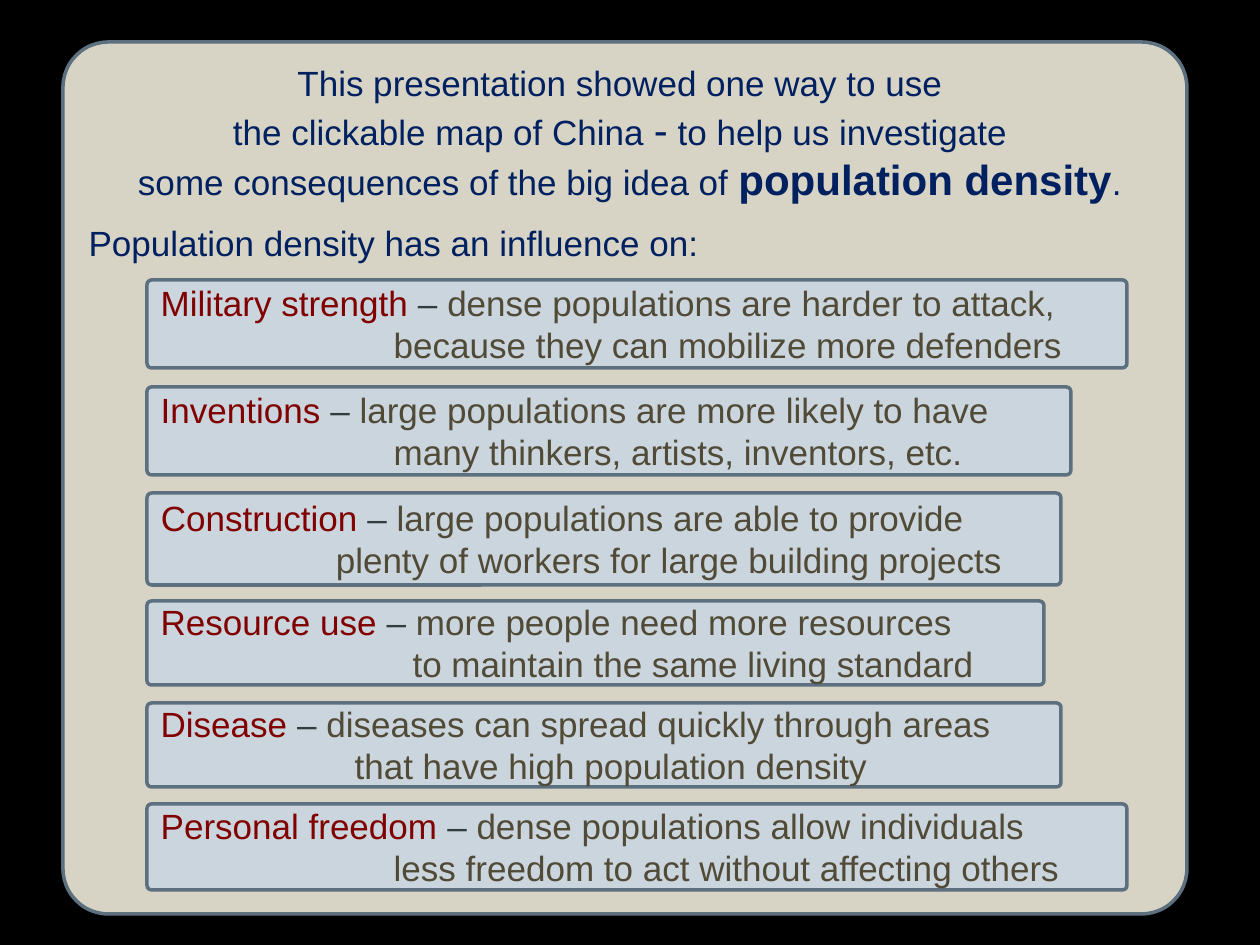
from pptx import Presentation
from pptx.dml.color import RGBColor
from pptx.enum.shapes import MSO_SHAPE
from pptx.enum.text import MSO_ANCHOR, PP_ALIGN
from pptx.util import Pt

PX = 914400 // 126  # EMU in one px
ROUNDED = MSO_SHAPE.ROUNDED_RECTANGLE
TOP, MIDDLE = MSO_ANCHOR.TOP, MSO_ANCHOR.MIDDLE
LEFT, CENTER = PP_ALIGN.LEFT, PP_ALIGN.CENTER

BLACK, SAND, PALE_BLUE, SLATE = "000000", "D8D4C5", "CBD5DE", "5D7080"
NAVY, MAROON, CHARCOAL, OLIVE = "002060", "800000", "343C3D", "504A36"

# alignment, space before in points, runs as (text, size, bold)
INTRO = [
    (CENTER, 0, [("This presentation showed one way to use ", 20, False)]),
    (CENTER, 0, [("the clickable map of China ", 20, False), ("-", 24, False),
                 (" to help us investigate ", 20, False)]),
    (CENTER, 0, [(" some consequences of the big idea of ", 20, False),
                 ("population density", 24, True), (".", 20, False)]),
    (LEFT, 10, [("Population density has an influence on:", 20, False)]),
]

# top, width, height, second-line indent, topic, first line, second line
INFLUENCES = [
    (280, 980, 88, 233, "Military strength", "dense populations are harder to attack,",
     "because they can mobilize more defenders"),
    (387, 924, 88, 233, "Inventions", "large populations are more likely to have",
     "many thinkers, artists, inventors, etc."),
    (493, 914, 92, 175, "Construction", "large populations are able to provide",
     "plenty of workers for large building projects"),
    (601, 897, 84, 252, "Resource use", "more people need more resources",
     "to maintain the same living standard"),
    (703, 914, 84, 194, "Disease", "diseases can spread quickly through areas",
     "that have high population density"),
    (804, 980, 86, 233, "Personal freedom", "dense populations allow individuals",
     "less freedom to act without affecting others"),
]
BAR_LEFT = 147


def color(hex_code):
    return RGBColor.from_string(hex_code)


def add_rounded_box(slide, box, fill, anchor):
    """Draw an outlined rounded box and return its text frame."""
    shape = slide.shapes.add_shape(ROUNDED, *(n * PX for n in box))
    shape.adjustments[0] = 0.052
    shape.shadow.inherit = False
    shape.fill.solid()
    shape.fill.fore_color.rgb = color(fill)
    shape.line.color.rgb = color(SLATE)
    shape.line.width = Pt(2)
    frame = shape.text_frame
    frame.word_wrap = True
    frame.vertical_anchor = anchor
    frame.margin_top = frame.margin_bottom = 6 * PX
    return frame


def add_run(paragraph, text, hex_code, size=20, bold=False):
    run = paragraph.add_run()
    run.text = text
    run.font.name = "Arial"
    run.font.size = Pt(size)
    run.font.bold = bold
    run.font.color.rgb = color(hex_code)


def add_intro_panel(slide, box):
    frame = add_rounded_box(slide, box, SAND, TOP)
    for index, (alignment, space, runs) in enumerate(INTRO):
        line = frame.add_paragraph() if index else frame.paragraphs[0]
        line.alignment = alignment
        line.space_before = Pt(space)
        for text, size, bold in runs:
            add_run(line, text, NAVY, size, bold)


def add_influence_bar(slide, box, indent, topic, claim, detail):
    frame = add_rounded_box(slide, box, PALE_BLUE, MIDDLE)
    first = frame.paragraphs[0]
    first.alignment = LEFT
    add_run(first, topic + " ", MAROON)
    add_run(first, "– ", CHARCOAL)
    add_run(first, claim, OLIVE)

    second = frame.add_paragraph()
    second.alignment = LEFT
    properties = second._p.get_or_add_pPr()
    properties.set("marL", str(indent * PX))
    properties.set("indent", "0")
    add_run(second, detail, OLIVE)


def main():
    presentation = Presentation()
    presentation.slide_width = 1260 * PX
    presentation.slide_height = 945 * PX
    slide = presentation.slides.add_slide(presentation.slide_layouts[6])
    slide.background.fill.solid()
    slide.background.fill.fore_color.rgb = color(BLACK)

    # Panel with the introduction
    add_intro_panel(slide, (63, 42, 1124, 872))

    # One bar for each influence
    for top, width, height, indent, *wording in INFLUENCES:
        add_influence_bar(slide, (BAR_LEFT, top, width, height), indent, *wording)

    presentation.save("out.pptx")


if __name__ == "__main__":
    main()
